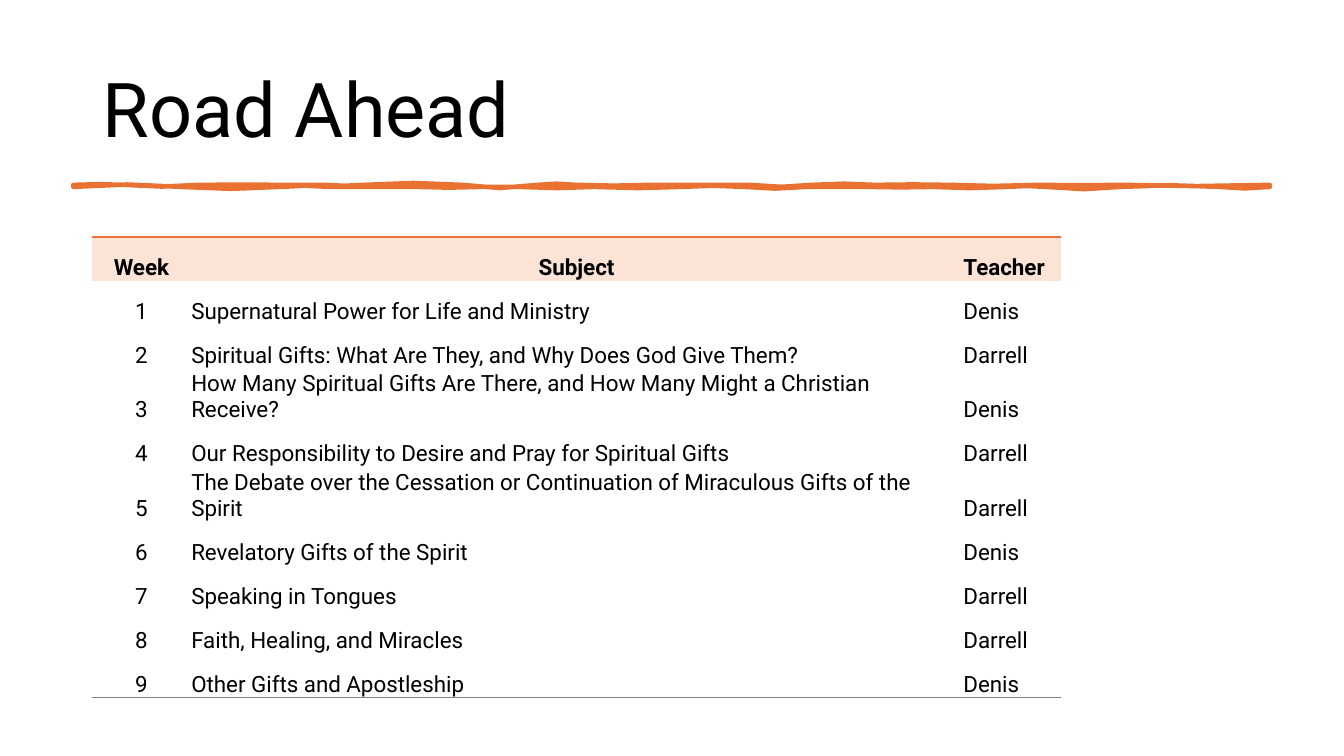
from lxml.etree import SubElement
from pptx import Presentation
from pptx.dml.color import RGBColor
from pptx.enum.text import MSO_ANCHOR, PP_ALIGN
from pptx.oxml import parse_xml
from pptx.oxml.ns import nsdecls, qn
from pptx.util import Cm, Pt

FONT = "Roboto"
BLACK, ORANGE, PEACH, GRAY = "000000", "E97132", "FBE3D6", "808080"
NO_STYLE = "{2D5ABB26-0587-4C30-8999-92F81FD0307C}"

# Wave edges: segment end, then the pull of its two control points (cm)
UPPER_EDGE = [
    (1.3, -0.05, 0), (3.18, 0.03, 0.08), (5.36, -0.05, 0.03), (6.33, 0, 0),
    (7.32, 0.03, 0.03), (9.81, -0.03, -0.1), (11.69, 0.13, 0.08),
    (12.68, -0.05, -0.03), (14.56, 0.05, 0), (17.05, 0.03, -0.03),
    (18.62, 0.05, 0.08), (20.2, -0.05, -0.03), (22.1, 0.05, -0.08),
    (24.29, 0.1, -0.03), (26.47, 0.05, -0.03), (30.15, 0.05, 0.03),
]
LOWER_EDGE = [
    (28.88, 0.05, 0.05), (26.39, -0.03, -0.08), (24.52, 0.1, 0.05),
    (23.52, -0.03, -0.03), (21.65, 0.05, 0.03), (20.07, 0, 0.03),
    (18.47, 0, 0), (16.9, 0.03, 0.08), (15.32, -0.05, -0.03),
    (13.14, 0.05, 0.03), (11.23, 0, 0.08), (10.27, -0.05, 0.05),
    (8.67, -0.03, 0.08), (6.48, -0.05, 0.05), (5.21, -0.05, -0.03),
    (2.72, 0.05, 0.08), (0, -0.08, -0.08),
]

SCHEDULE = [
    ("Week", "Subject", "Teacher"),
    ("1", "Supernatural Power for Life and Ministry", "Denis"),
    ("2", "Spiritual Gifts: What Are They, and Why Does God Give Them?", "Darrell"),
    ("3", "How Many Spiritual Gifts Are There, and How Many Might a Christian Receive?", "Denis"),
    ("4", "Our Responsibility to Desire and Pray for Spiritual Gifts", "Darrell"),
    ("5", "The Debate over the Cessation or Continuation of Miraculous Gifts of the Spirit", "Darrell"),
    ("6", "Revelatory Gifts of the Spirit", "Denis"),
    ("7", "Speaking in Tongues", "Darrell"),
    ("8", "Faith, Healing, and Miracles", "Darrell"),
    ("9", "Other Gifts and Apostleship", "Denis"),
]


def color(hex_string):
    return RGBColor.from_string(hex_string)


def format_paragraph(paragraph, size, bold=False):
    for run in paragraph.runs:
        run.font.name = FONT
        run.font.size = Pt(size)
        run.font.bold = bold
        run.font.color.rgb = color(BLACK)


def add_title(slide, left, top, width, height):
    shape = slide.shapes.add_textbox(Cm(left), Cm(top), Cm(width), Cm(height))
    frame = shape.text_frame
    frame.word_wrap = True
    frame.vertical_anchor = MSO_ANCHOR.MIDDLE
    frame.text = "Road Ahead"
    frame.paragraphs[0].line_spacing = 0.9
    format_paragraph(frame.paragraphs[0], 54)


def trace_edge(start, base, edge):
    """Give the middle and the end of each curve segment of one edge."""
    points = [(start, base)]
    for end, first, second in edge:
        middle_pull = 3 / 8 * (first + second)
        points += [((start + end) / 2, base + middle_pull), (end, base)]
        start = end
    return points


def add_wavy_rule(slide, left, top, width, thickness):
    points = trace_edge(0, 0, UPPER_EDGE) + trace_edge(width, thickness, LOWER_EDGE)
    outline = [(Cm(left + x), Cm(top + y)) for x, y in points]
    builder = slide.shapes.build_freeform(*outline[0])
    builder.add_line_segments(outline[1:], close=True)
    shape = builder.convert_to_shape()
    shape.shadow.inherit = False
    shape.fill.solid()
    shape.fill.fore_color.rgb = color(ORANGE)
    shape.line.color.rgb = color(ORANGE)
    shape.line.width = Pt(3.25)


def add_border(cell, side, hex_string, points):
    border = parse_xml(f'<a:{side} {nsdecls("a")} w="{Pt(points)}"/>')
    fill = SubElement(border, qn("a:solidFill"))
    SubElement(fill, qn("a:srgbClr"), val=hex_string)
    cell._tc.get_or_add_tcPr().insert(0, border)


def add_schedule(slide, left, top, column_widths, row_height):
    rows, columns = len(SCHEDULE), len(column_widths)
    frame = slide.shapes.add_table(rows, columns, Cm(left), Cm(top),
                                   Cm(sum(column_widths)), Cm(rows * row_height))
    table = frame.table
    table.first_row = table.horz_banding = False
    table._tbl.tblPr.find(qn("a:tableStyleId")).text = NO_STYLE
    for column, width in zip(table.columns, column_widths):
        column.width = Cm(width)
    for row_index, texts in enumerate(SCHEDULE):
        is_header = row_index == 0
        table.rows[row_index].height = Cm(row_height)
        for column_index, text in enumerate(texts):
            cell = table.cell(row_index, column_index)
            cell.margin_left = cell.margin_right = Cm(0.02)
            cell.margin_top = Cm(0.01)
            cell.margin_bottom = 0
            cell.vertical_anchor = MSO_ANCHOR.BOTTOM
            cell.text = text
            paragraph = cell.text_frame.paragraphs[0]
            centered = column_index == 0 or (is_header and column_index == 1)
            paragraph.alignment = PP_ALIGN.CENTER if centered else PP_ALIGN.LEFT
            format_paragraph(paragraph, 16, is_header)
            # Header band and closing line
            if is_header:
                cell.fill.solid()
                cell.fill.fore_color.rgb = color(PEACH)
                add_border(cell, "lnT", ORANGE, 1)
            else:
                cell.fill.background()
            if row_index == rows - 1:
                add_border(cell, "lnB", GRAY, 0.5)


def main():
    presentation = Presentation()
    presentation.slide_width = Cm(33.87)
    presentation.slide_height = Cm(19.05)
    slide = presentation.slides.add_slide(presentation.slide_layouts[6])
    add_title(slide, 2.34, 1.02, 29.21, 3.68)
    add_wavy_rule(slide, 1.85, 4.66, 30.15, 0.05)
    add_schedule(slide, 2.33, 5.97, [2.47, 19.46, 2.47], 1.11)
    presentation.save("out.pptx")


if __name__ == "__main__":
    main()
